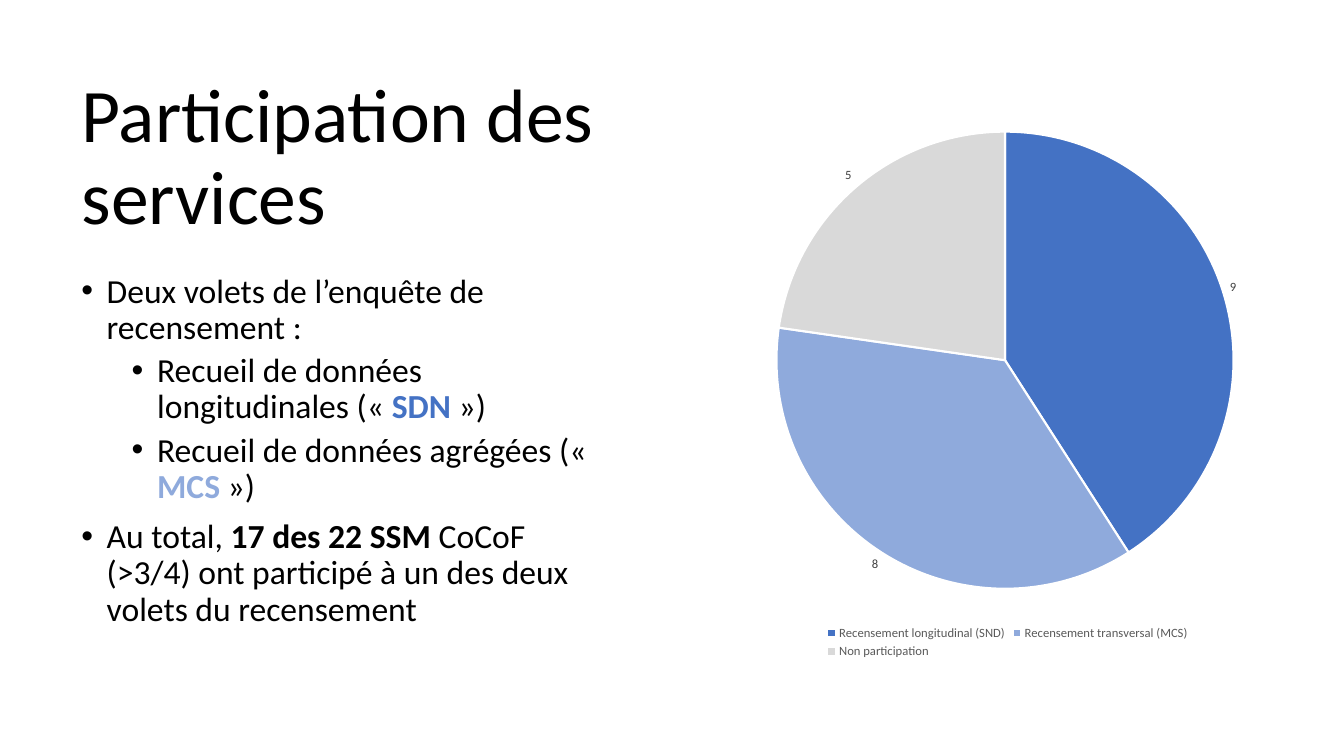
from lxml import etree
from pptx import Presentation
from pptx import util as u
from pptx.chart import data
from pptx.dml import color
from pptx.enum import chart as charts, text
from pptx.oxml import ns

FONT = "Calibri"
COLORS = {
    "black": "000000",
    "longitudinal": "4472C4",
    "transversal": "8FAADC",
    "absent": "D9D9D9",
    "label": "404040",
    "legend": "595959",
    "white": "FFFFFF",
}
COUNTS = [
    ("Recensement longitudinal (SND)", 9, "longitudinal"),
    ("Recensement transversal (MCS)", 8, "transversal"),
    ("Non participation", 5, "absent"),
]
BULLETS = [
    (0, [("Deux volets de l’enquête de recensement :", "black", False)]),
    (1, [("Recueil de données longitudinales (« ", "black", False),
         ("SDN", "longitudinal", True), (" »)", "black", False)]),
    (1, [("Recueil de données agrégées (« ", "black", False),
         ("MCS", "transversal", True), (" »)", "black", False)]),
    (0, [("Au total, ", "black", False), ("17 des 22 SSM ", "black", True),
         ("CoCoF (>3/4) ont participé à un des deux volets du recensement",
          "black", False)]),
]


def rgb(name):
    """Return the named colour."""
    return color.RGBColor.from_string(COLORS[name])


def style_font(font, size, color_name, bold=False):
    """Apply the face, size, colour and weight to a font."""
    font.name = FONT
    font.size = u.Pt(size)
    font.bold = bold
    font.color.rgb = rgb(color_name)


def add_run(paragraph, words, size, color_name="black", bold=False):
    """Append one formatted run to a paragraph."""
    run = paragraph.add_run()
    run.text = words
    style_font(run.font, size, color_name, bold)


def set_bullet(paragraph, level):
    """Give a paragraph its level, hanging indent and bullet."""
    paragraph.level = level
    properties = paragraph._p.get_or_add_pPr()
    properties.set("marL", str(u.Cm(0.64 + 1.27 * level)))
    properties.set("indent", str(u.Cm(-0.64)))
    etree.SubElement(properties, ns.qn("a:buFont")).set("typeface", "Arial")
    etree.SubElement(properties, ns.qn("a:buChar")).set("char", "•")


def fill_title(slide, words):
    """Place and write the slide title."""
    title = slide.shapes.title
    title.left, title.top = u.Cm(1.8), u.Cm(1.75)
    title.width, title.height = u.Cm(13.74), u.Cm(4.5)
    frame = title.text_frame
    frame.auto_size = text.MSO_AUTO_SIZE.NONE
    frame.vertical_anchor = text.MSO_ANCHOR.MIDDLE
    paragraph = frame.paragraphs[0]
    paragraph.alignment = text.PP_ALIGN.LEFT
    paragraph.line_spacing = 0.9
    add_run(paragraph, words, 54)


def add_bullets(slide, bullets):
    """Add the bulleted text below the title."""
    box = slide.shapes.add_textbox(u.Cm(1.8), u.Cm(6.78), u.Cm(13.74), u.Cm(10.52))
    frame = box.text_frame
    frame.word_wrap = True
    for index, (level, runs) in enumerate(bullets):
        paragraph = frame.add_paragraph() if index else frame.paragraphs[0]
        paragraph.line_spacing = 0.9
        paragraph.space_before = u.Pt(5 if level else 10)
        set_bullet(paragraph, level)
        for words, color_name, bold in runs:
            add_run(paragraph, words, 24, color_name, bold)


def set_plot_layout(chart, **fractions):
    """Fix the inner plot area as fractions of the chart."""
    plot_area = chart._chartSpace.chart.plotArea
    layout = plot_area.find(ns.qn("c:layout"))
    if layout is None:
        layout = etree.Element(ns.qn("c:layout"))
        plot_area.insert(0, layout)
    manual = etree.SubElement(layout, ns.qn("c:manualLayout"))
    settings = {"layoutTarget": "inner", "xMode": "edge", "yMode": "edge", **fractions}
    for tag, value in settings.items():
        etree.SubElement(manual, ns.qn(f"c:{tag}")).set("val", str(value))


def add_pie(slide, counts):
    """Add the pie chart with its labels and legend."""
    chart_data = data.CategoryChartData()
    chart_data.categories = [name for name, _, _ in counts]
    chart_data.add_series("Services", [value for _, value, _ in counts])
    chart = slide.shapes.add_chart(
        charts.XL_CHART_TYPE.PIE, u.Cm(19.18), u.Cm(2.31), u.Cm(12.42), u.Cm(14.4),
        chart_data).chart
    style_font(chart.font, 10, "black")
    chart.has_title = False
    chart.has_legend = True
    chart.legend.position = charts.XL_LEGEND_POSITION.BOTTOM
    chart.legend.include_in_layout = False
    style_font(chart.legend.font, 9, "legend")
    set_plot_layout(chart, x=0.03, y=0.07, w=0.93, h=0.8)

    plot = chart.plots[0]
    plot.vary_by_categories = True
    for index, (_, _, color_name) in enumerate(counts):
        slice_format = plot.series[0].points[index].format
        slice_format.fill.solid()
        slice_format.fill.fore_color.rgb = rgb(color_name)
        slice_format.line.color.rgb = rgb("white")
        slice_format.line.width = u.Pt(1.5)
    labels = plot.series[0].data_labels
    labels.show_value = True
    labels.show_percentage = False
    labels.position = charts.XL_LABEL_POSITION.OUTSIDE_END
    style_font(labels.font, 9, "label")


def main():
    """Build the slide and save it."""
    presentation = Presentation()
    presentation.slide_width, presentation.slide_height = u.Cm(33.87), u.Cm(19.05)
    slide = presentation.slides.add_slide(presentation.slide_layouts[5])
    fill_title(slide, "Participation des services")
    add_bullets(slide, BULLETS)
    add_pie(slide, COUNTS)
    presentation.save("out.pptx")


if __name__ == "__main__":
    main()
